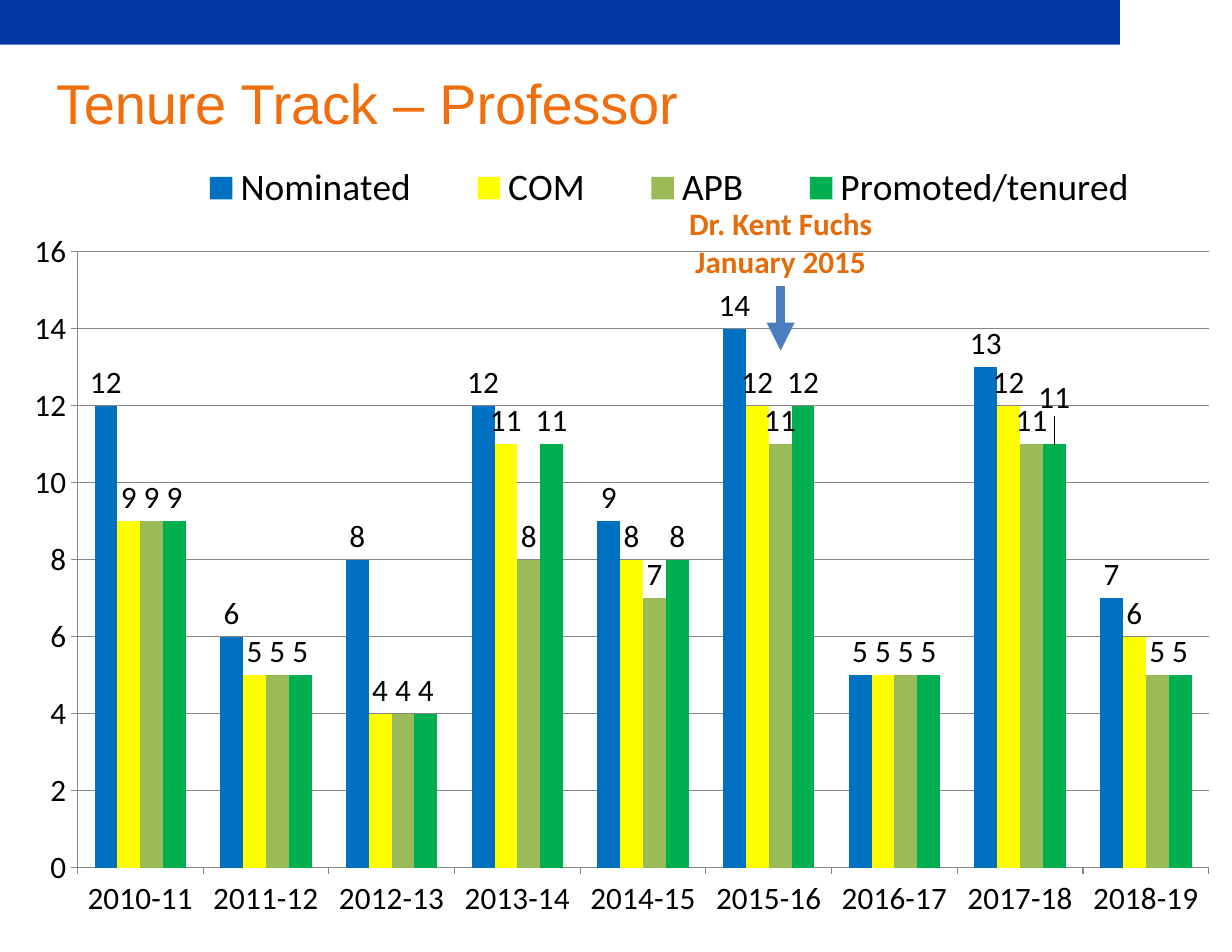
"""Build the professor tenure track slide with its clustered column chart."""
import pptx
import pptx.chart.data
import pptx.dml.color
import pptx.enum.chart
import pptx.enum.shapes
import pptx.enum.text
import pptx.oxml
import pptx.oxml.ns
import pptx.util
from pptx.util import Inches, Pt

TITLE = "Tenure Track – Professor"
NOTE = ["Dr. Kent Fuchs", "January 2015"]
YEARS = ["2010-11", "2011-12", "2012-13", "2013-14", "2014-15",
         "2015-16", "2016-17", "2017-18", "2018-19"]
SERIES = [
    ("Nominated", "blue", (12, 6, 8, 12, 9, 14, 5, 13, 7)),
    ("COM", "yellow", (9, 5, 4, 11, 8, 12, 5, 12, 6)),
    ("APB", "olive", (9, 5, 4, 8, 7, 11, 5, 11, 5)),
    ("Promoted/tenured", "green", (9, 5, 4, 11, 8, 12, 5, 11, 5)),
]
COLORS = {"banner": "0037A2", "title": "F06E0D", "note": "E46C0A",
          "arrow": "4B7EBC", "grid": "868686", "text": "000000",
          "blue": "0070C0", "yellow": "FFFF00", "olive": "9BBB59",
          "green": "00B050"}
PLOT = {"layoutTarget": "inner", "xMode": "edge", "yMode": "edge",
        "x": 0.056, "y": 0.131, "w": 0.925, "h": 0.786}
LEGEND = {"xMode": "edge", "yMode": "edge",
          "x": 0.12, "y": 0.01, "w": 0.84, "h": 0.08}
SHIFT = {"x": 0, "y": -0.03}


def color(name):
    return pptx.dml.color.RGBColor.from_string(COLORS[name])


def style(font, size, name, face="Calibri", bold=False):
    font.size, font.name, font.bold = Pt(size), face, bold
    font.color.rgb = color(name)


def layout(values):
    tags = "".join(f'<c:{key} val="{val}"/>' for key, val in values.items())
    space = pptx.oxml.ns.nsdecls("c")
    return pptx.oxml.parse_xml(
        f"<c:layout {space}><c:manualLayout>{tags}</c:manualLayout></c:layout>")


def place(parent, values, index):
    for old in parent.findall(pptx.oxml.ns.qn("c:layout")):
        parent.remove(old)
    parent.insert(index, layout(values))


def add_banner(slide):
    bar = slide.shapes.add_shape(pptx.enum.shapes.MSO_SHAPE.RECTANGLE,
                                 0, 0, Inches(10), Inches(0.4))
    bar.shadow.inherit = False
    bar.fill.solid()
    bar.fill.fore_color.rgb = color("banner")
    bar.line.fill.background()


def add_title(slide):
    title = slide.shapes.title
    title.left, title.top = Inches(0.5), Inches(0.6)
    title.width, title.height = Inches(5.7), Inches(0.63)
    frame = title.text_frame
    frame.text = TITLE
    frame.margin_left = frame.margin_right = frame.margin_bottom = 0
    frame.margin_top = Inches(0.01)
    frame.vertical_anchor = pptx.enum.text.MSO_ANCHOR.TOP
    frame.word_wrap = False
    para = frame.paragraphs[0]
    para.alignment = pptx.enum.text.PP_ALIGN.LEFT
    para.space_before = Pt(1)
    run = para.runs[0]
    style(run.font, 36, "title", "Arial")
    run.font._element.set("spc", "-10")


def add_columns(slide):
    kinds = pptx.enum.chart
    data = pptx.chart.data.CategoryChartData()
    data.categories = YEARS
    for name, _, values in SERIES:
        data.add_series(name, values)
    chart = slide.shapes.add_chart(
        kinds.XL_CHART_TYPE.COLUMN_CLUSTERED, Inches(0.08), Inches(1.33),
        Inches(10.92), Inches(7), data).chart
    style(chart.font, 20, "text")
    chart.has_title = False
    chart.has_legend = True
    legend = chart.legend
    legend.position = kinds.XL_LEGEND_POSITION.TOP
    legend.include_in_layout = False
    style(legend.font, 24, "text")
    place(legend._element, LEGEND, 1)
    place(chart._chartSpace.chart.plotArea, PLOT, 0)

    scale = chart.value_axis
    scale.minimum_scale, scale.maximum_scale, scale.major_unit = 0, 16, 2
    scale.has_major_gridlines = True
    lines = [scale.major_gridlines.format.line]
    for axis in (scale, chart.category_axis):
        axis.major_tick_mark = kinds.XL_TICK_MARK.OUTSIDE
        lines.append(axis.format.line)
    for line in lines:
        line.color.rgb = color("grid")
        line.width = Pt(0.75)

    plot = chart.plots[0]
    plot.gap_width, plot.overlap, plot.vary_by_categories = 150, 0, False
    for series, (_, tint, _) in zip(plot.series, SERIES):
        series.format.fill.solid()
        series.format.fill.fore_color.rgb = color(tint)
        series.invert_if_negative = False
        labels = series.data_labels
        labels.show_value = True
        labels.position = kinds.XL_LABEL_POSITION.OUTSIDE_END
        style(labels.font, 20, "text")
    label = plot.series[-1].points[YEARS.index("2017-18")].data_label
    label.position = kinds.XL_LABEL_POSITION.OUTSIDE_END
    style(label.font, 20, "text")
    place(label._dLbl, SHIFT, 1)


def add_note(slide):
    box = slide.shapes.add_textbox(Inches(5.76), Inches(1.78),
                                   Inches(2.42), Inches(0.77))
    frame = box.text_frame
    frame.word_wrap = True
    frame.text = "\n".join(NOTE)
    for para in frame.paragraphs:
        para.alignment = pptx.enum.text.PP_ALIGN.CENTER
        style(para.runs[0].font, 20, "note", bold=True)
    arrow = slide.shapes.add_connector(
        pptx.enum.shapes.MSO_CONNECTOR.STRAIGHT,
        Inches(6.97), Inches(2.55), Inches(6.97), Inches(3.13))
    arrow.line.color.rgb = color("arrow")
    arrow.line.width = Pt(6)
    space = pptx.oxml.ns.nsdecls("a")
    arrow.line._get_or_add_ln().append(
        pptx.oxml.parse_xml(f'<a:tailEnd {space} type="triangle"/>'))
    arrow._element.spPr.append(pptx.oxml.parse_xml(f"<a:effectLst {space}/>"))


def main():
    deck = pptx.Presentation()
    deck.slide_width, deck.slide_height = Inches(11), Inches(8.5)
    slide = deck.slides.add_slide(deck.slide_layouts[5])
    add_banner(slide)
    add_title(slide)
    add_columns(slide)
    add_note(slide)
    deck.save("out.pptx")


if __name__ == "__main__":
    main()
